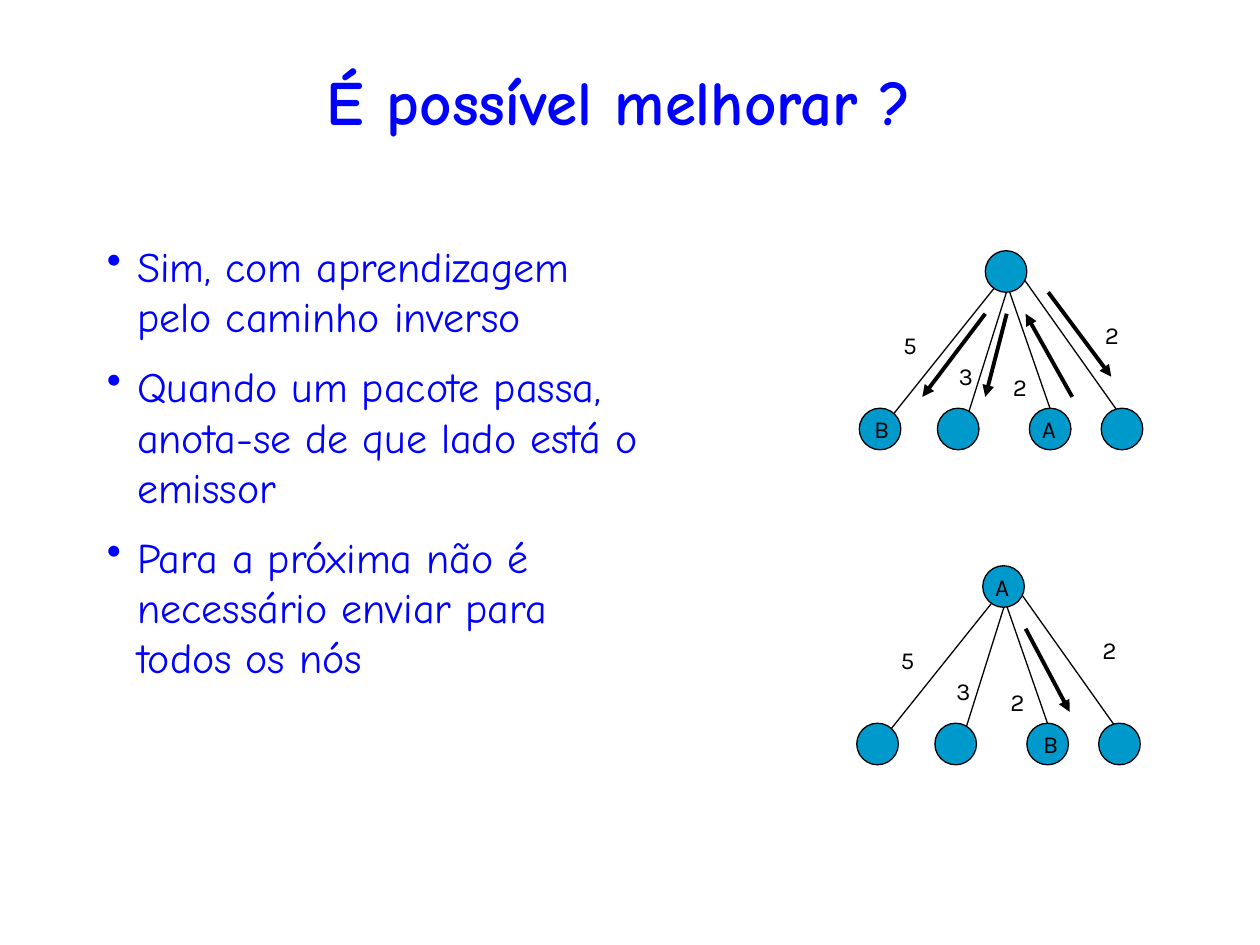
import pptx
import pptx.dml.color
import pptx.enum.shapes
import pptx.enum.text
import pptx.oxml.ns
import pptx.util
import lxml.etree

Inches = pptx.util.Inches
COLORS = {"text": "0000FF", "node": "0099CC", "ink": "000000"}
NODE_SIZE = 0.33
EDGES = [(0.18, 0.29, 0.6, 1.5), (0.18, 0.16, -0.82, 1.41),
         (0.26, 0.16, 1.09, 1.33), (-0.2, 1.5, 0.18, 0.29)]
NODES = [(0, 0), (-1, 1.25), (-0.38, 1.25), (0.35, 1.25), (0.92, 1.25)]
WEIGHTS = [("5", -0.75, 0.58), ("3", -0.31, 0.83), ("2", 0.12, 0.91), ("2", 0.85, 0.5)]
TREES = [
    {"root": (7.82, 1.99),
     "letters": [("A", 0.35, 1.25), ("B", -0.98, 1.25)],
     "arrows": [(0.17, 0.5, 0, 1.16), (0, 0.5, -0.5, 1.16),
                (0.5, 0.33, 1, 1), (0.69, 1.16, 0.32, 0.5)]},
    {"root": (7.8, 4.49),
     "letters": [("A", 0, 0), ("B", 0.38, 1.25)],
     "arrows": [(0.34, 0.5, 0.69, 1.16)]},
]
BULLETS = [
    "Sim, com aprendizagem pelo caminho inverso",
    "Quando um pacote passa, anota-se de que lado está o emissor",
    "Para a próxima não é necessário enviar para todos os nós",
]


class SlideBuilder:
    """Holds the style and the current slide, and draws each kind of element."""

    heading_font = "Comic Neue"
    label_font = "Karla"

    def __init__(self, slide):
        self.slide = slide

    def color(self, name):
        return pptx.dml.color.RGBColor.from_string(COLORS[name])

    def add_run(self, paragraph, text, font, size, color, bold=False):
        run = paragraph.add_run()
        run.text = text
        run.font.name = font
        run.font.size = pptx.util.Pt(size)
        run.font.bold = bold
        run.font.color.rgb = self.color(color)

    def text_frame(self, left, top, width, height):
        shape = self.slide.shapes.add_textbox(
            Inches(left), Inches(top), Inches(width), Inches(height))
        shape.text_frame.word_wrap = True
        return shape.text_frame

    def title(self, text, left, top, width, height):
        frame = self.text_frame(left, top, width, height)
        frame.vertical_anchor = pptx.enum.text.MSO_ANCHOR.MIDDLE
        paragraph = frame.paragraphs[0]
        paragraph.alignment = pptx.enum.text.PP_ALIGN.CENTER
        self.add_run(paragraph, text, self.heading_font, 36, "text", bold=True)

    def bullets(self, items, left, top, width, height):
        frame = self.text_frame(left, top, width, height)
        for index, item in enumerate(items):
            paragraph = frame.add_paragraph() if index else frame.paragraphs[0]
            if index:
                paragraph.space_before = pptx.util.Pt(11)
            properties = paragraph._p.get_or_add_pPr()
            properties.set("marL", str(Inches(0.24)))
            properties.set("indent", str(-Inches(0.24)))
            bullet = lxml.etree.SubElement(properties, pptx.oxml.ns.qn("a:buChar"))
            bullet.set("char", "•")
            self.add_run(paragraph, item, self.heading_font, 24, "text")

    def label(self, text, left, top):
        frame = self.text_frame(left, top, 0.27, 0.33)
        frame.margin_right = 0
        self.add_run(frame.paragraphs[0], text, self.label_font, 14, "ink")

    def node(self, left, top):
        shape = self.slide.shapes.add_shape(
            pptx.enum.shapes.MSO_SHAPE.OVAL,
            Inches(left), Inches(top), Inches(NODE_SIZE), Inches(NODE_SIZE))
        shape.shadow.inherit = False
        shape.fill.solid()
        shape.fill.fore_color.rgb = self.color("node")
        shape.line.color.rgb = self.color("ink")
        shape.line.width = pptx.util.Pt(0.75)

    def line(self, start_x, start_y, end_x, end_y, width=0.75, arrow=False):
        connector = self.slide.shapes.add_connector(
            pptx.enum.shapes.MSO_CONNECTOR.STRAIGHT,
            Inches(start_x), Inches(start_y), Inches(end_x), Inches(end_y))
        connector.line.color.rgb = self.color("ink")
        connector.line.width = pptx.util.Pt(width)
        properties = connector._element.spPr
        if arrow:
            tail = lxml.etree.SubElement(
                connector.line._get_or_add_ln(), pptx.oxml.ns.qn("a:tailEnd"))
            tail.set("type", "triangle")
        lxml.etree.SubElement(properties, pptx.oxml.ns.qn("a:effectLst"))

    def tree(self, root, letters, arrows):
        x, y = root
        for x1, y1, x2, y2 in EDGES:
            self.line(x + x1, y + y1, x + x2, y + y2)
        for dx, dy in NODES:
            self.node(x + dx, y + dy)
        for text, dx, dy in WEIGHTS + letters:
            self.label(text, x + dx, y + dy)
        for x1, y1, x2, y2 in arrows:
            self.line(x + x1, y + y1, x + x2, y + y2, width=2.25, arrow=True)


def main():
    presentation = pptx.Presentation()
    presentation.slide_width = Inches(10)
    presentation.slide_height = Inches(7.5)
    builder = SlideBuilder(presentation.slides.add_slide(presentation.slide_layouts[6]))
    builder.title("É possível melhorar ?", 0.33, 0.42, 9.17, 0.75)
    for tree in TREES:
        builder.tree(**tree)
    builder.bullets(BULLETS, 0.75, 1.86, 4.54, 4.99)
    presentation.save("out.pptx")


if __name__ == "__main__":
    main()
